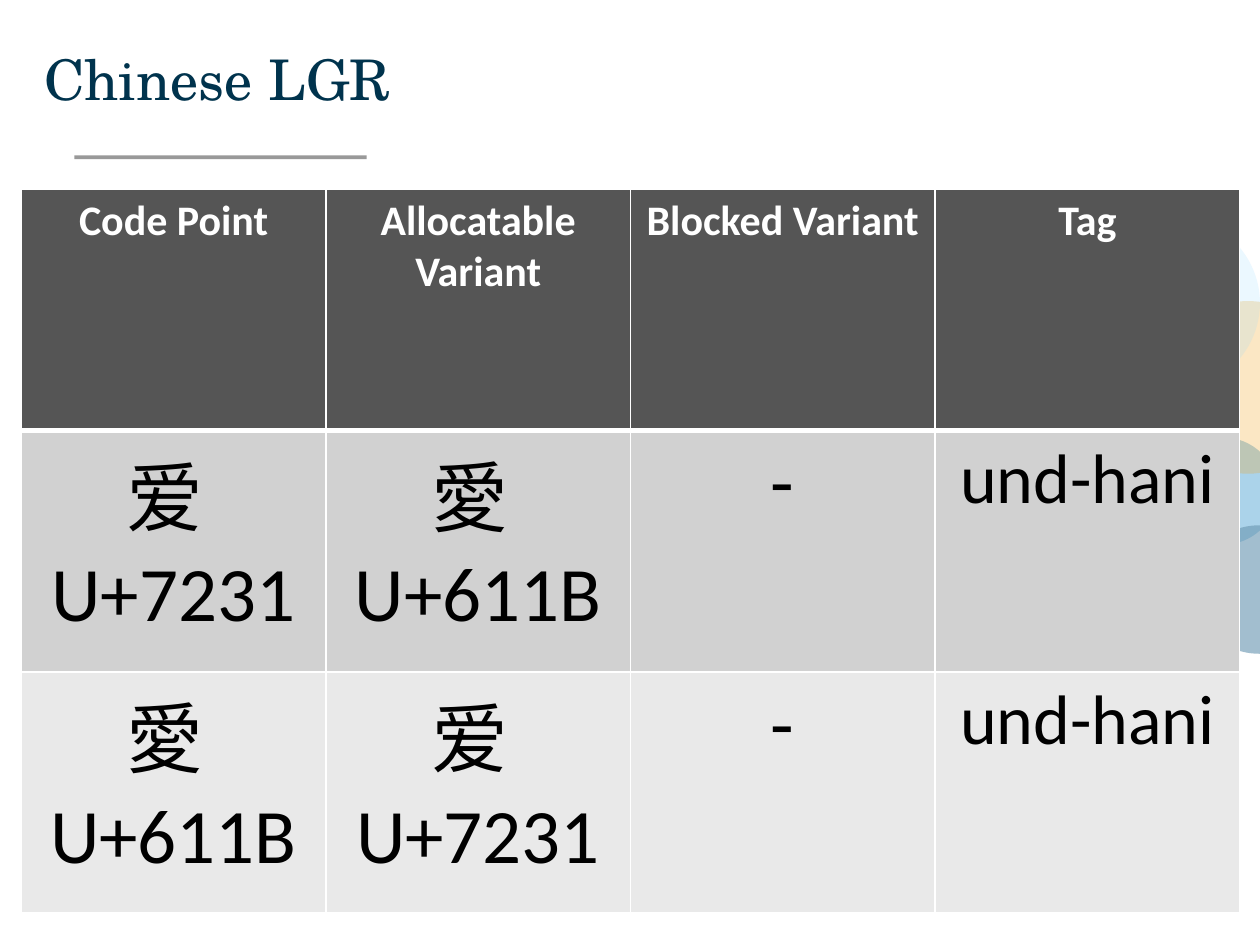
from pptx import Presentation
from pptx.dml.color import RGBColor
from pptx.enum.shapes import MSO_CONNECTOR as Connector, MSO_SHAPE as Shape
from pptx.enum.text import MSO_ANCHOR as Anchor, PP_ALIGN as Align
from pptx.oxml.ns import qn
from pptx.util import Cm, Pt
from lxml.etree import SubElement

WHITE, BLACK, GREY = "FFFFFF", "000000", "555555"
HEADINGS = ["Code Point", "Allocatable Variant", "Blocked Variant", "Tag"]
SIMPLIFIED, TRADITIONAL = "爱 \nU+7231", "愛 \nU+611B"
VARIANTS = [
    [SIMPLIFIED, TRADITIONAL, "-", "und-hani"],
    [TRADITIONAL, SIMPLIFIED, "-", "und-hani"],
]
ROW_FILLS = [GREY, "D1D1D1", "E9E9E9"]


def colour(value):
    return RGBColor.from_string(value)


def set_opacity(item, percent):
    for tint in item._element.spPr.iter(qn("a:srgbClr")):
        SubElement(tint, qn("a:alpha"), val=str(percent * 1000))


def add_rule(page, left, top, width):
    rule = page.shapes.add_connector(
        Connector.STRAIGHT, Cm(left), Cm(top), Cm(left + width), Cm(top))
    rule.line.color.rgb = colour(GREY)
    rule.line.width = Pt(2)
    set_opacity(rule, 60)
    SubElement(rule._element.spPr, qn("a:effectLst"))


def add_bubbles(page, left, top):
    bubbles = [
        (1.65, 4.45, 2.18, 2.16, "037BC0", 33),
        (2.13, 6.22, 2.67, 2.59, "6D99B3", 63),
        (1.5, 1.7, 3.48, 3.48, "F1A31E", 26),
        (0, 0, 3.48, 3.48, "93DAFF", 18),
    ]
    for x, y, width, height, fill, opacity in bubbles:
        bubble = page.shapes.add_shape(
            Shape.OVAL, Cm(left + x), Cm(top + y), Cm(width), Cm(height))
        bubble.shadow.inherit = False
        bubble.fill.solid()
        bubble.fill.fore_color.rgb = colour(fill)
        bubble.line.fill.background()
        set_opacity(bubble, opacity)


def add_title(page, left, top, width, height, text):
    box = page.shapes.add_textbox(Cm(left), Cm(top), Cm(width), Cm(height))
    frame = box.text_frame
    frame.word_wrap = True
    frame.vertical_anchor = Anchor.TOP
    frame.margin_left = Cm(0.48)
    frame.margin_right = Cm(0.1)
    frame.margin_top = frame.margin_bottom = Cm(0.05)
    para = frame.paragraphs[0]
    para.text = text
    para.font.name = "TeX Gyre Schola"
    para.font.size = Pt(32)
    para.font.color.rgb = colour("00334D")


def set_borders(cell, top, bottom):
    properties = cell._tc.get_or_add_tcPr()
    for side, points in (("L", 1), ("R", 1), ("T", top), ("B", bottom)):
        border = SubElement(properties, qn("a:ln" + side), w=str(Pt(points)))
        SubElement(SubElement(border, qn("a:solidFill")), qn("a:srgbClr"), val=WHITE)


def fill_cell(cell, text, size, ink, bold):
    cell.text = text
    for para in cell.text_frame.paragraphs:
        para.alignment = Align.CENTER
        para.font.name = "Calibri"
        para.font.size = Pt(size)
        para.font.bold = bold
        para.font.color.rgb = colour(ink)


def add_variant_table(page, left, top, width, height):
    rows = [HEADINGS] + VARIANTS
    table = page.shapes.add_table(
        len(rows), len(HEADINGS), Cm(left), Cm(top), Cm(width), Cm(height)).table
    for row, texts in enumerate(rows):
        header = row == 0
        for column, text in enumerate(texts):
            cell = table.cell(row, column)
            set_borders(cell, 3 if row == 1 else 1, 3 if header else 1)
            cell.fill.solid()
            cell.fill.fore_color.rgb = colour(ROW_FILLS[row])
            size = 24 if header else 40 if column == 3 else 44
            fill_cell(cell, text, size, WHITE if header else BLACK, header)


def main():
    deck = Presentation()
    deck.slide_width, deck.slide_height = Cm(25.4), Cm(19.05)
    page = deck.slides.add_slide(deck.slide_layouts[6])
    add_rule(page, 1.5, 3.17, 5.89)
    add_bubbles(page, 21.92, 4.37)
    add_title(page, 0.41, 0.84, 14.27, 1.7, "Chinese LGR")
    add_variant_table(page, 0.43, 3.81, 24.56, 14.6)
    deck.save("out.pptx")


if __name__ == "__main__":
    main()
